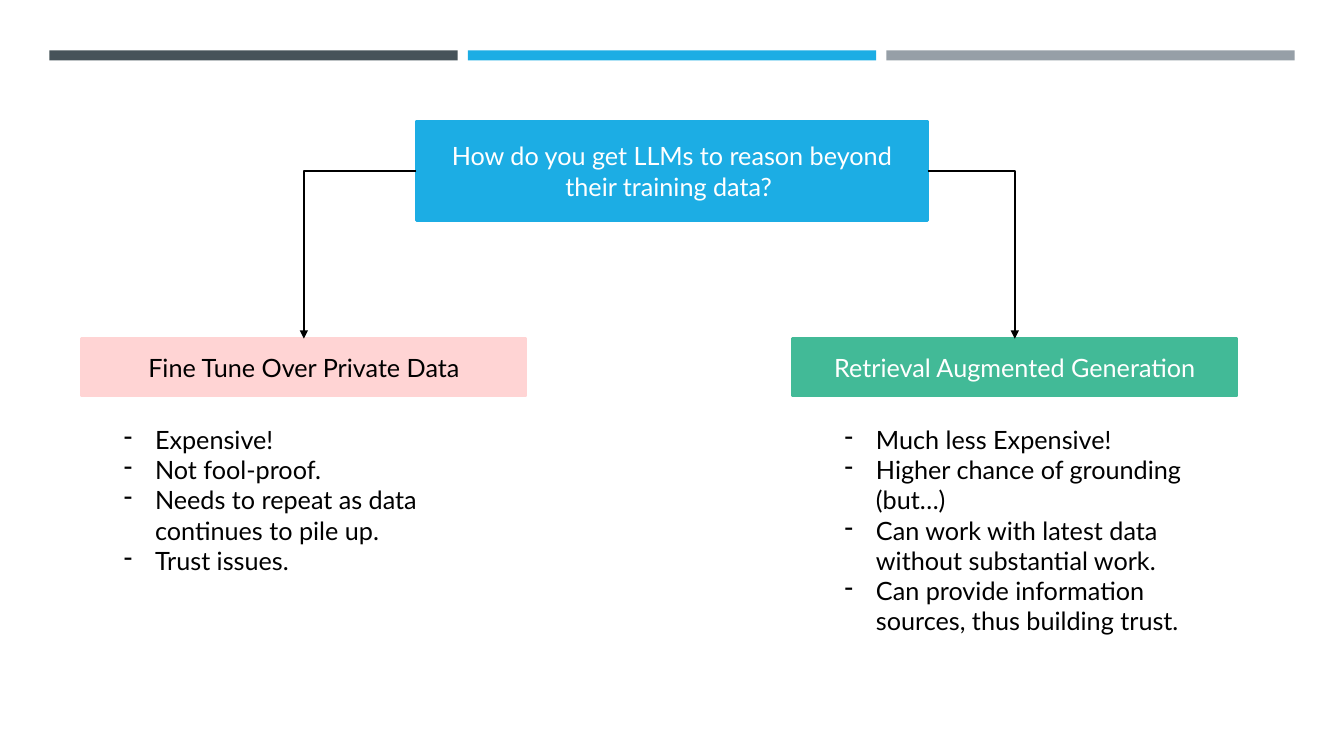
from dataclasses import dataclass

from lxml.etree import SubElement
from pptx import Presentation
from pptx.dml.color import RGBColor
from pptx.enum.shapes import MSO_CONNECTOR, MSO_SHAPE
from pptx.enum.text import MSO_ANCHOR, MSO_AUTO_SIZE, PP_ALIGN
from pptx.oxml.ns import qn
from pptx.slide import Slide
from pptx.text.text import _Paragraph
from pptx.util import Inches, Pt


@dataclass(frozen=True)
class Theme:
    font: str = "Lato"
    size: int = 18
    border: float = 1.75
    arrow: float = 1
    slate: str = "465359"
    blue: str = "1CADE4"
    gray: str = "969FA7"
    pink: str = "FFD4D4"
    green: str = "42BA97"
    black: str = "000000"
    white: str = "FFFFFF"


THEME = Theme()


@dataclass(frozen=True)
class Box:
    left: float
    top: float
    width: float
    height: float
    fill: str
    text: str = ""
    color: str = THEME.white

    @property
    def center(self) -> float:
        return self.left + self.width / 2

    @property
    def middle(self) -> float:
        return self.top + self.height / 2


@dataclass(frozen=True)
class Option:
    box: Box
    list_left: float
    list_height: float
    points: tuple[str, ...]


BARS = [
    Box(0.49 + i * 4.15, 0.5, 4.05, 0.1, fill)
    for i, fill in enumerate((THEME.slate, THEME.blue, THEME.gray))
]
QUESTION = Box(4.13, 1.2, 5.07, 0.99, THEME.blue,
               "How do you get LLMs to reason beyond their training data? ")
OPTIONS = [
    Option(
        Box(0.81, 3.36, 4.41, 0.57, THEME.pink, "Fine Tune Over Private Data", THEME.black),
        1.13, 1.62,
        ("Expensive!",
         "Not fool-proof.",
         "Needs to repeat as data continues to pile up.",
         "Trust issues."),
    ),
    Option(
        Box(7.86, 3.36, 4.41, 0.57, THEME.green, "Retrieval Augmented Generation"),
        8.28, 2.22,
        ("Much less Expensive!",
         "Higher chance of grounding (but…)",
         "Can work with latest data without substantial work.",
         "Can provide information sources, thus building trust."),
    ),
]


def add_run(p: _Paragraph, text: str, color: str) -> None:
    r = p.add_run()
    r.text = text
    r.font.name = THEME.font
    r.font.size = Pt(THEME.size)
    r.font.color.rgb = RGBColor.from_string(color)


def add_box(s: Slide, box: Box) -> None:
    sp = s.shapes.add_shape(MSO_SHAPE.RECTANGLE, Inches(box.left), Inches(box.top),
                            Inches(box.width), Inches(box.height))
    sp.shadow.inherit = False
    sp.fill.solid()
    sp.fill.fore_color.rgb = RGBColor.from_string(box.fill)
    if not box.text:
        sp.line.fill.background()
        return
    sp.line.color.rgb = RGBColor.from_string(box.fill)
    sp.line.width = Pt(THEME.border)
    tf = sp.text_frame
    tf.word_wrap = True
    tf.vertical_anchor = MSO_ANCHOR.MIDDLE
    p = tf.paragraphs[0]
    p.alignment = PP_ALIGN.CENTER
    add_run(p, box.text, box.color)


def add_points(s: Slide, option: Option) -> None:
    sp = s.shapes.add_textbox(Inches(option.list_left), Inches(4.16),
                              Inches(3.57), Inches(option.list_height))
    tf = sp.text_frame
    tf.word_wrap = True
    tf.auto_size = MSO_AUTO_SIZE.SHAPE_TO_FIT_TEXT
    for i, point in enumerate(option.points):
        p = tf.add_paragraph() if i else tf.paragraphs[0]
        pPr = p._p.get_or_add_pPr()
        pPr.set("marL", str(Inches(0.31)))
        pPr.set("indent", str(-Inches(0.31)))
        SubElement(pPr, qn("a:buFontTx"))
        SubElement(pPr, qn("a:buChar")).set("char", "-")
        add_run(p, point, THEME.black)


def add_arrow(s: Slide, source: Box, target: Box) -> None:
    start = source.left if target.center < source.center else source.left + source.width
    cxn = s.shapes.add_connector(MSO_CONNECTOR.ELBOW, Inches(start), Inches(source.middle),
                                 Inches(target.center), Inches(target.top))
    cxn.line.color.rgb = RGBColor.from_string(THEME.black)
    cxn.line.width = Pt(THEME.arrow)
    spPr = cxn._element.spPr
    spPr.find(qn("a:prstGeom")).set("prst", "bentConnector2")
    SubElement(spPr.find(qn("a:ln")), qn("a:tailEnd")).set("type", "triangle")
    SubElement(spPr, qn("a:effectLst"))


def main() -> None:
    prs = Presentation()
    prs.slide_width = Inches(13.33)
    prs.slide_height = Inches(7.5)
    s = prs.slides.add_slide(prs.slide_layouts[6])
    for box in (*BARS, QUESTION):
        add_box(s, box)
    for option in OPTIONS:
        add_box(s, option.box)
        add_points(s, option)
        add_arrow(s, QUESTION, option.box)
    prs.save("out.pptx")


if __name__ == "__main__":
    main()
